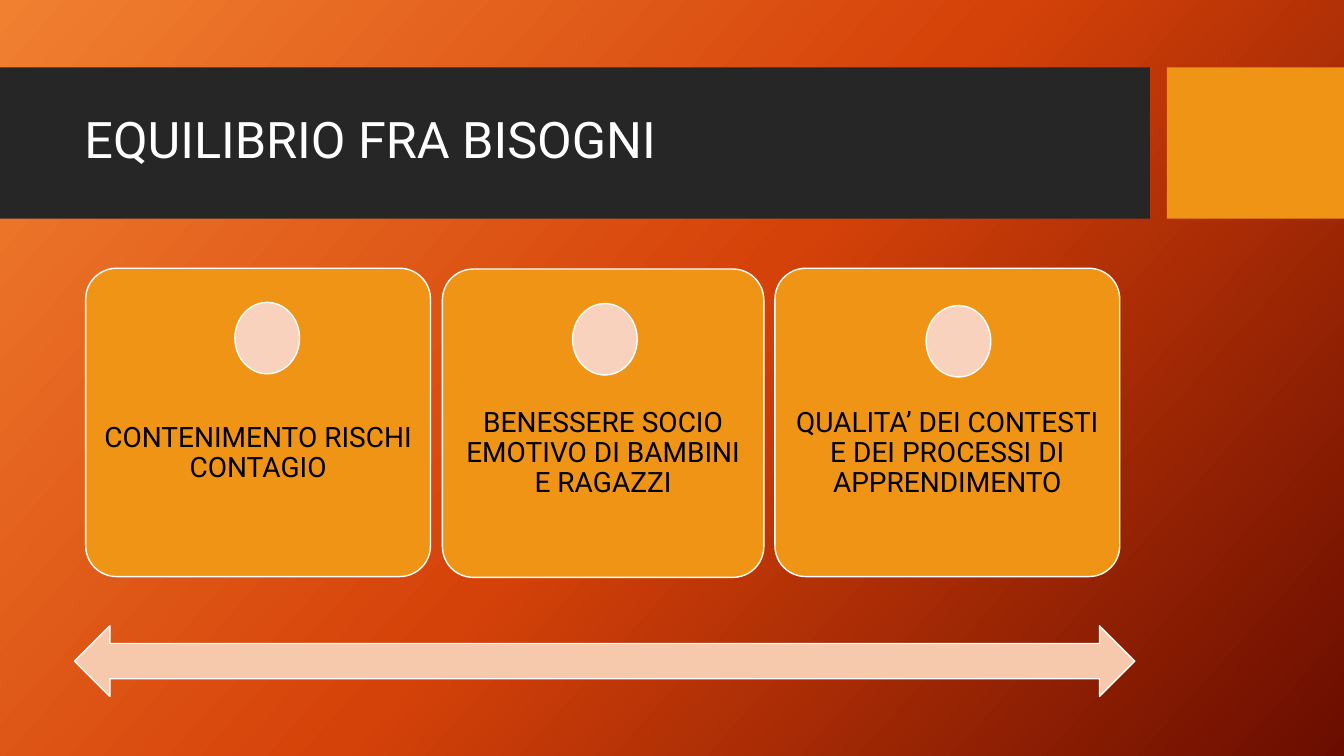
from copy import deepcopy

from pptx import Presentation
from pptx.dml.color import RGBColor
from pptx.enum.shapes import MSO_SHAPE as Preset
from pptx.enum.text import MSO_ANCHOR as Anchor, PP_ALIGN as Align
from pptx.oxml.ns import qn
from pptx.util import Cm, Pt

WHITE = RGBColor(0xFF, 0xFF, 0xFF)
BLACK = RGBColor(0x00, 0x00, 0x00)
CHARCOAL = RGBColor(0x26, 0x26, 0x26)
AMBER = RGBColor(0xF0, 0x94, 0x15)
BLUSH = RGBColor(0xF8, 0xD2, 0xBD)
PEACH = RGBColor(0xF6, 0xC8, 0xAC)
GRADIENT = [
    (0, RGBColor(0xF1, 0x80, 0x31)),
    (0.5, RGBColor(0xD5, 0x42, 0x09)),
    (1, RGBColor(0x6A, 0x0D, 0x00)),
]

NEEDS = [
    ("CONTENIMENTO RISCHI CONTAGIO", (2.16, 6.76, 8.69), (5.92, 7.62)),
    ("BENESSERE SOCIO EMOTIVO DI BAMBINI E RAGAZZI", (11.15, 6.78, 8.1), (14.43, 7.65)),
    ("QUALITA’ DEI CONTESTI E DEI PROCESSI DI APPRENDIMENTO", (19.53, 6.76, 8.69), (23.34, 7.7)),
]


def apply_format(target, values):
    """Set every attribute named in a dict of format values."""
    for name, value in values.items():
        setattr(target, name, value)


def paint_background(page):
    """Give the page its diagonal three-colour gradient."""
    fill = page.background.fill
    fill.gradient()
    fill.gradient_angle = 360 - 42
    stops = page.element.find(".//" + qn("a:gsLst"))
    stops.append(deepcopy(stops[-1]))
    for stop, (position, colour) in zip(fill.gradient_stops, GRADIENT):
        stop.position = position
        stop.color.rgb = colour


def add_block(page, preset, place, colour, outlined=True):
    """Add a flat filled shape, with a thin white outline if wanted."""
    block = page.shapes.add_shape(preset, *map(Cm, place))
    block.shadow.inherit = False
    block.fill.solid()
    block.fill.fore_color.rgb = colour
    if outlined:
        block.line.color.rgb = WHITE
        block.line.width = Pt(1)
    else:
        block.line.fill.background()
    return block


def add_label(page, text, place, size, colour, align, inset):
    """Add a wrapped, vertically centred text box."""
    box = page.shapes.add_textbox(*map(Cm, place))
    sides = ("margin_left", "margin_top", "margin_right", "margin_bottom")
    apply_format(box.text_frame, {
        "word_wrap": True,
        "vertical_anchor": Anchor.MIDDLE,
        **dict.fromkeys(sides, Cm(inset)),
    })
    para = box.text_frame.paragraphs[0]
    apply_format(para, {"alignment": align, "line_spacing": 0.9})
    span = para.add_run()
    span.text = text
    apply_format(span.font, {"name": "Roboto", "size": Pt(size)})
    span.font.color.rgb = colour


def add_need(page, text, card_place, dot_place):
    """Add a rounded card with its dot and caption."""
    left, top, width = card_place
    card = add_block(page, Preset.ROUNDED_RECTANGLE, (left, top, width, 7.77), AMBER)
    card.adjustments[0] = 0.1
    add_label(page, text, (left, 9.88, width, 3.1), 20, BLACK, Align.CENTER, 0.41)
    add_block(page, Preset.OVAL, (*dot_place, 1.63, 1.8), BLUSH)


def main():
    """Build the slide and save it."""
    deck = Presentation()
    apply_format(deck, {"slide_width": Cm(33.87), "slide_height": Cm(19.05)})
    page = deck.slides.add_slide(deck.slide_layouts[6])
    paint_background(page)
    add_block(page, Preset.RECTANGLE, (0, 1.7, 28.98, 3.81), CHARCOAL, outlined=False)
    add_block(page, Preset.RECTANGLE, (29.41, 1.7, 4.46, 3.81), AMBER, outlined=False)
    add_label(page, "EQUILIBRIO FRA BISOGNI", (1.88, 2.08, 26.7, 3), 36, WHITE, Align.LEFT, 0.25)
    for need in NEEDS:
        add_need(page, *need)
    add_block(page, Preset.LEFT_RIGHT_ARROW, (1.88, 15.77, 26.72, 1.78), PEACH)
    deck.save("out.pptx")


if __name__ == "__main__":
    main()
